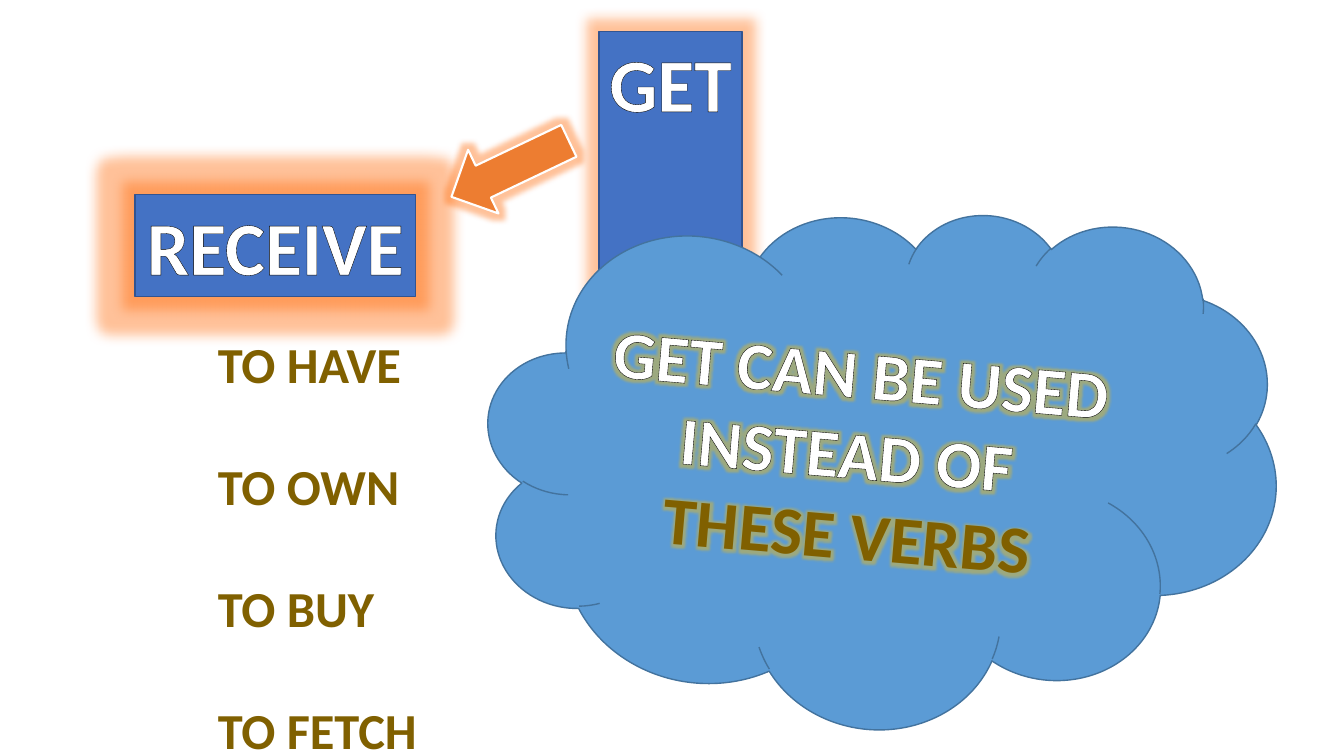
from pptx import Presentation
from pptx.dml.color import RGBColor
from pptx.enum.shapes import MSO_SHAPE as Preset
from pptx.enum.text import MSO_ANCHOR as Anchor, MSO_AUTO_SIZE as AutoSize, PP_ALIGN as Align
from pptx.oxml.ns import qn
from pptx.util import Inches, Pt
from lxml.etree import SubElement

WHITE = RGBColor(0xFF, 0xFF, 0xFF)
BLACK = RGBColor(0x00, 0x00, 0x00)
BLUE = RGBColor(0x44, 0x72, 0xC4)
DARK_BLUE = RGBColor(0x32, 0x54, 0x91)
SKY = RGBColor(0x5B, 0x9B, 0xD5)
DARK_SKY = RGBColor(0x43, 0x73, 0x9E)
ORANGE = RGBColor(0xED, 0x7D, 0x31)
ORANGE_GLOW = RGBColor(0xFF, 0x66, 0x00)
GOLD_GLOW = RGBColor(0xFF, 0xC0, 0x00)
BROWN = RGBColor(0x80, 0x60, 0x00)

VERBS = ["TO HAVE", "TO OWN", "TO BUY", "TO FETCH"]


def add_color(parent, color):
    fill = SubElement(parent, qn("a:solidFill"))
    SubElement(fill, qn("a:srgbClr"), val=str(color))


def add_glow(effects, color, radius):
    glow = SubElement(effects, qn("a:glow"), rad=str(radius))
    tint = SubElement(glow, qn("a:srgbClr"), val=str(color))
    SubElement(tint, qn("a:alpha"), val="40000")


def place(shape, box):
    for name, value in zip(("left", "top", "width", "height"), box):
        setattr(shape, name, Inches(value))


def paint(shape, fill, line, width, glow=0):
    """Fill and outline a shape; glow is the radius of its orange halo in inches."""
    shape.shadow.inherit = False
    shape.fill.solid()
    shape.fill.fore_color.rgb = fill
    shape.line.color.rgb = line
    shape.line.width = Pt(width)
    if glow:
        effects = shape._element.spPr.find(qn("a:effectLst"))
        add_glow(effects, ORANGE_GLOW, Inches(glow))


def write(para, text, size, color, outline, width, glow=0):
    """Add bold text with outlined letters and, if asked, a golden halo."""
    span = para.add_run()
    span.text = text
    for name, value in {"name": "Calibri", "size": Pt(size), "bold": True}.items():
        setattr(span.font, name, value)
    span.font.color.rgb = color
    props = span._r.get_or_add_rPr()
    line = SubElement(props, qn("a:ln"), w=str(Pt(width)))
    add_color(line, outline)
    props.insert(0, line)
    if glow:
        effects = SubElement(props, qn("a:effectLst"))
        add_glow(effects, GOLD_GLOW, Inches(glow))
        props.insert(2, effects)


def set_frame(shape, **options):
    frame = shape.text_frame
    for name, value in options.items():
        setattr(frame, name, value)
    return frame


def build_label(shape, box, text):
    place(shape, box)
    paint(shape, BLUE, DARK_BLUE, 1, glow=0.25)
    frame = set_frame(shape, word_wrap=False, vertical_anchor=Anchor.TOP,
                      auto_size=AutoSize.SHAPE_TO_FIT_TEXT)
    para = frame.paragraphs[0]
    para.alignment = Align.CENTER
    write(para, text, 54, WHITE, BLACK, 0)


def build_arrow(page, box):
    arrow = page.shapes.add_shape(Preset.DOWN_ARROW, 0, 0, 0, 0)
    place(arrow, box)
    arrow.rotation = 64.5
    paint(arrow, ORANGE, WHITE, 1.5, glow=0.11)


def build_verbs(body, box):
    place(body, box)
    frame = set_frame(body, word_wrap=True, vertical_anchor=Anchor.TOP,
                      auto_size=AutoSize.SHAPE_TO_FIT_TEXT)
    for index, verb in enumerate(VERBS):
        para = frame.add_paragraph() if index else frame.paragraphs[0]
        props = para._p.get_or_add_pPr()
        props.set("marL", "0")
        props.set("indent", "0")
        SubElement(props, qn("a:buNone"))
        para.alignment = Align.LEFT
        para.space_before = Pt(44 if index else 0)
        write(para, verb, 36, BROWN, BLACK, 1.5)


def build_cloud(page, box):
    cloud = page.shapes.add_shape(Preset.CLOUD, 0, 0, 0, 0)
    place(cloud, box)
    cloud.rotation = 5
    paint(cloud, SKY, DARK_SKY, 1)
    frame = set_frame(cloud, word_wrap=True, vertical_anchor=Anchor.MIDDLE)
    first, second = frame.paragraphs[0], frame.add_paragraph()
    first.alignment = second.alignment = Align.CENTER
    write(first, "GET CAN BE USED INSTEAD OF ", 48, WHITE, BLACK, 1.5, glow=0.1)
    write(second, "THESE VERBS", 48, BROWN, WHITE, 1.5, glow=0.1)


def main():
    deck = Presentation()
    deck.slide_width, deck.slide_height = Inches(13.33), Inches(7.5)
    page = deck.slides.add_slide(deck.slide_layouts[1])
    title, body = page.placeholders
    build_label(title, (5.94, 0.31, 1.42, 1.01), "GET")
    receive = page.shapes.add_shape(Preset.RECTANGLE, 0, 0, 0, 0)
    build_label(receive, (1.34, 1.93, 2.78, 1.01), "RECEIVE")
    build_arrow(page, (4.71, 1.03, 0.7, 1.29))
    build_verbs(body, (2.06, 3.25, 2.6, 4.64))
    build_cloud(page, (4.82, 2.04, 7.84, 5.18))
    deck.save("out.pptx")


if __name__ == "__main__":
    main()
